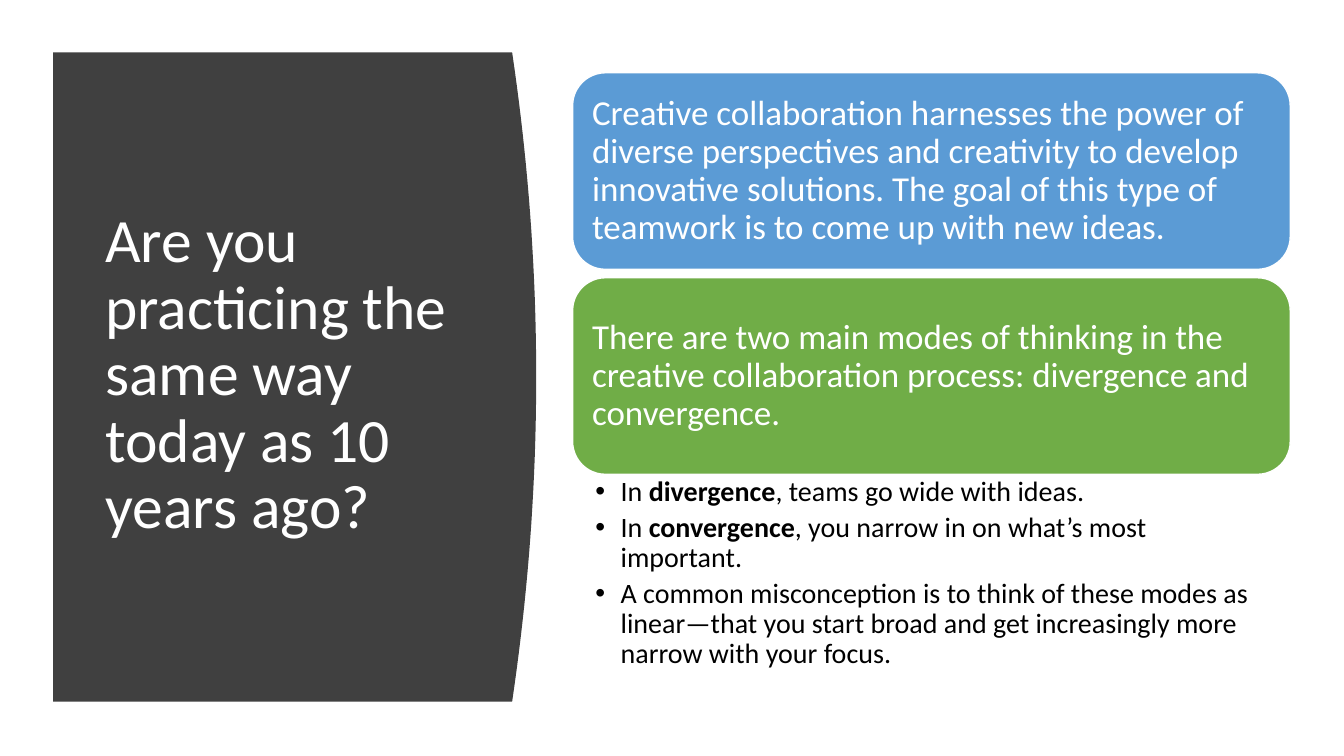
from lxml.etree import SubElement
from pptx import Presentation
from pptx.dml.color import RGBColor
from pptx.enum.shapes import MSO_SHAPE
from pptx.enum.text import MSO_ANCHOR, MSO_AUTO_SIZE, PP_ALIGN
from pptx.oxml.ns import qn
from pptx.util import Pt

WHITE = RGBColor(0xFF, 0xFF, 0xFF)
BLACK = RGBColor(0x00, 0x00, 0x00)
CHARCOAL = RGBColor(0x40, 0x40, 0x40)
BLUE = RGBColor(0x5B, 0x9B, 0xD5)
GREEN = RGBColor(0x70, 0xAD, 0x47)
FONT = "Calibri"

TITLE = "Are you practicing the same way today as 10 years ago?"
CARDS = [
    ("Creative collaboration harnesses the power of diverse perspectives and "
     "creativity to develop innovative solutions. The goal of this type of "
     "teamwork is to come up with new ideas.", BLUE),
    ("There are two main modes of thinking in the creative collaboration "
     "process: divergence and convergence.", GREEN),
]
BULLETS = [
    [("In ", False), ("divergence", True), (", teams go wide with ideas.", False)],
    [("In ", False), ("convergence", True),
     (", you narrow in on what’s most important.", False)],
    [("A common misconception is to think of these modes as linear—that you "
      "start broad and get increasingly more narrow with your focus.", False)],
]

PANEL_LEFT, PANEL_TOP, PANEL_BOTTOM = 38, 37.4, 501.2
PANEL_EDGE, PANEL_BULGE, CURVE_STEPS = 365.8, 17.2, 40
COLUMN_LEFT, COLUMN_WIDTH = 409, 512.6
CARD_TOP, CARD_HEIGHT, CARD_PITCH = 52, 140.4, 146.4
BULLETS_TOP, BULLETS_HEIGHT = 338.8, 147


def format_runs(para, size, color):
    para.line_spacing = 0.9
    para.alignment = PP_ALIGN.LEFT
    for span in para.runs:
        span.font.name = FONT
        span.font.size = Pt(size)
        span.font.color.rgb = color


def set_frame(frame, left, top, right, bottom, anchor):
    frame.word_wrap = True
    frame.auto_size = MSO_AUTO_SIZE.NONE
    frame.vertical_anchor = anchor
    frame.margin_left, frame.margin_top = Pt(left), Pt(top)
    frame.margin_right, frame.margin_bottom = Pt(right), Pt(bottom)


def add_panel(slide):
    curve = []
    for step in range(CURVE_STEPS + 1):
        share = step / CURVE_STEPS
        x = PANEL_EDGE + PANEL_BULGE * (1 - (2 * share - 1) ** 2)
        y = PANEL_TOP + (PANEL_BOTTOM - PANEL_TOP) * share
        curve.append((Pt(x), Pt(y)))
    builder = slide.shapes.build_freeform(Pt(PANEL_LEFT), Pt(PANEL_TOP))
    builder.add_line_segments(curve + [(Pt(PANEL_LEFT), Pt(PANEL_BOTTOM))], close=True)
    panel = builder.convert_to_shape()
    panel.shadow.inherit = False
    panel.fill.solid()
    panel.fill.fore_color.rgb = CHARCOAL
    panel.line.fill.background()
    slide.shapes._spTree.insert(2, panel._element)


def add_title(slide):
    title = slide.shapes.title
    title.left, title.top, title.width, title.height = Pt(68), Pt(80), Pt(269), Pt(377)
    title.text_frame.text = TITLE
    set_frame(title.text_frame, 7.2, 3.6, 7.2, 3.6, MSO_ANCHOR.MIDDLE)
    format_runs(title.text_frame.paragraphs[0], 44, WHITE)


def add_card(slide, index, text, color):
    card = slide.shapes.add_shape(
        MSO_SHAPE.ROUNDED_RECTANGLE, Pt(COLUMN_LEFT), Pt(CARD_TOP + index * CARD_PITCH),
        Pt(COLUMN_WIDTH), Pt(CARD_HEIGHT))
    card.shadow.inherit = False
    card.fill.solid()
    card.fill.fore_color.rgb = color
    card.line.color.rgb = WHITE
    card.line.width = Pt(1)
    card.text_frame.text = text
    set_frame(card.text_frame, 7.2, 7.2, 7.2, 7.2, MSO_ANCHOR.MIDDLE)
    format_runs(card.text_frame.paragraphs[0], 25, WHITE)


def add_bullets(slide):
    box = slide.shapes.add_textbox(
        Pt(COLUMN_LEFT), Pt(BULLETS_TOP), Pt(COLUMN_WIDTH), Pt(BULLETS_HEIGHT))
    frame = box.text_frame
    set_frame(frame, 16.3, 2.2, 13.7, 2.2, MSO_ANCHOR.TOP)
    for index, parts in enumerate(BULLETS):
        para = frame.paragraphs[0] if index == 0 else frame.add_paragraph()
        properties = para._p.get_or_add_pPr()
        properties.set("marL", str(Pt(18)))
        properties.set("indent", str(Pt(-18)))
        SubElement(properties, qn("a:buFont"), typeface="Arial")
        SubElement(properties, qn("a:buChar"), char="•")
        for text, bold in parts:
            span = para.add_run()
            span.text = text
            span.font.bold = bold
        format_runs(para, 20, BLACK)
        para.space_after = Pt(4)


def main():
    deck = Presentation()
    deck.slide_width, deck.slide_height = Pt(960), Pt(540)
    slide = deck.slides.add_slide(deck.slide_layouts[5])
    add_panel(slide)
    add_title(slide)
    for index, (text, color) in enumerate(CARDS):
        add_card(slide, index, text, color)
    add_bullets(slide)
    deck.save("out.pptx")


if __name__ == "__main__":
    main()
